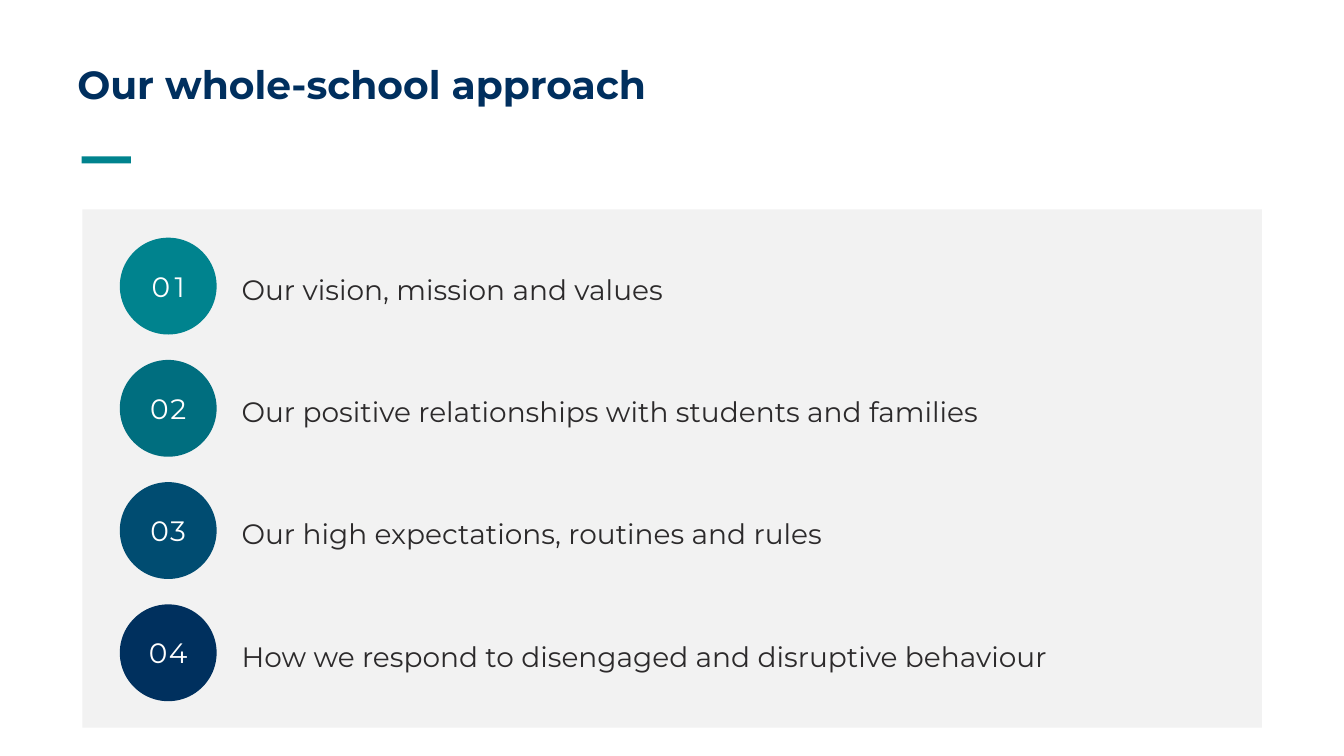
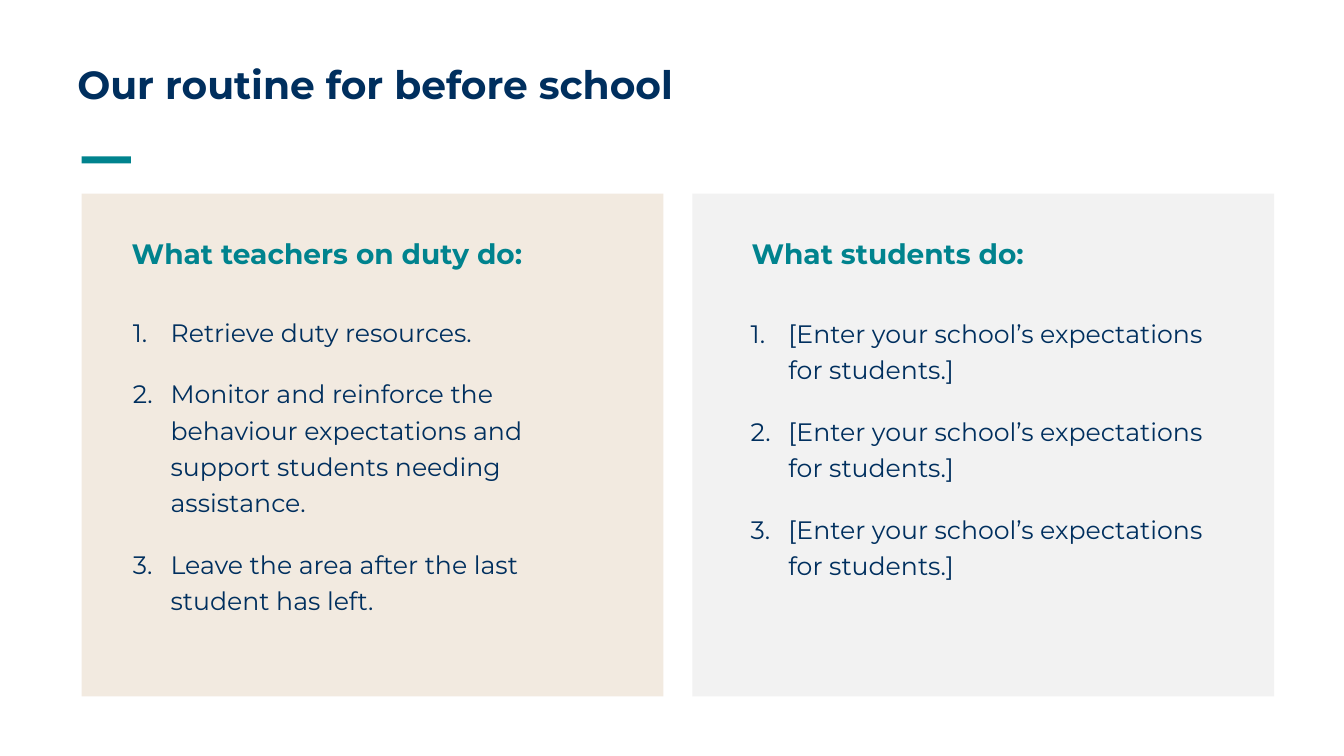
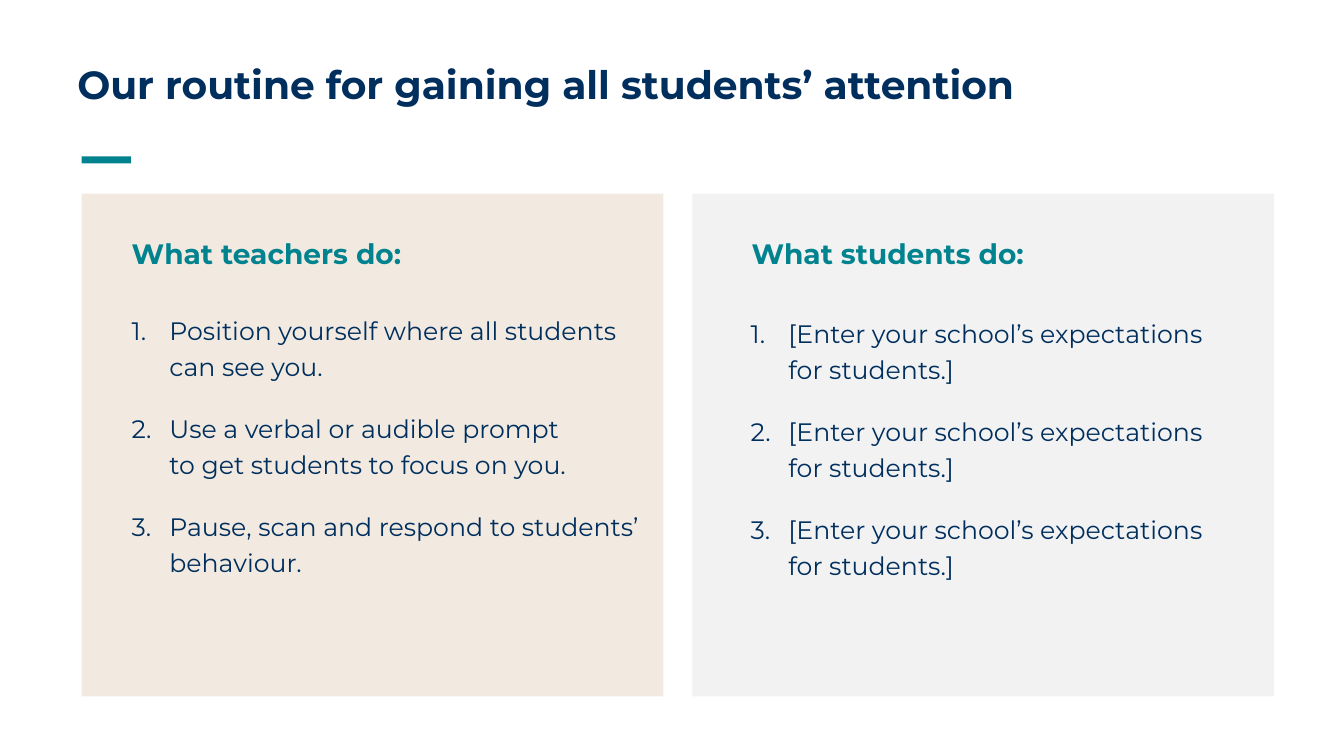
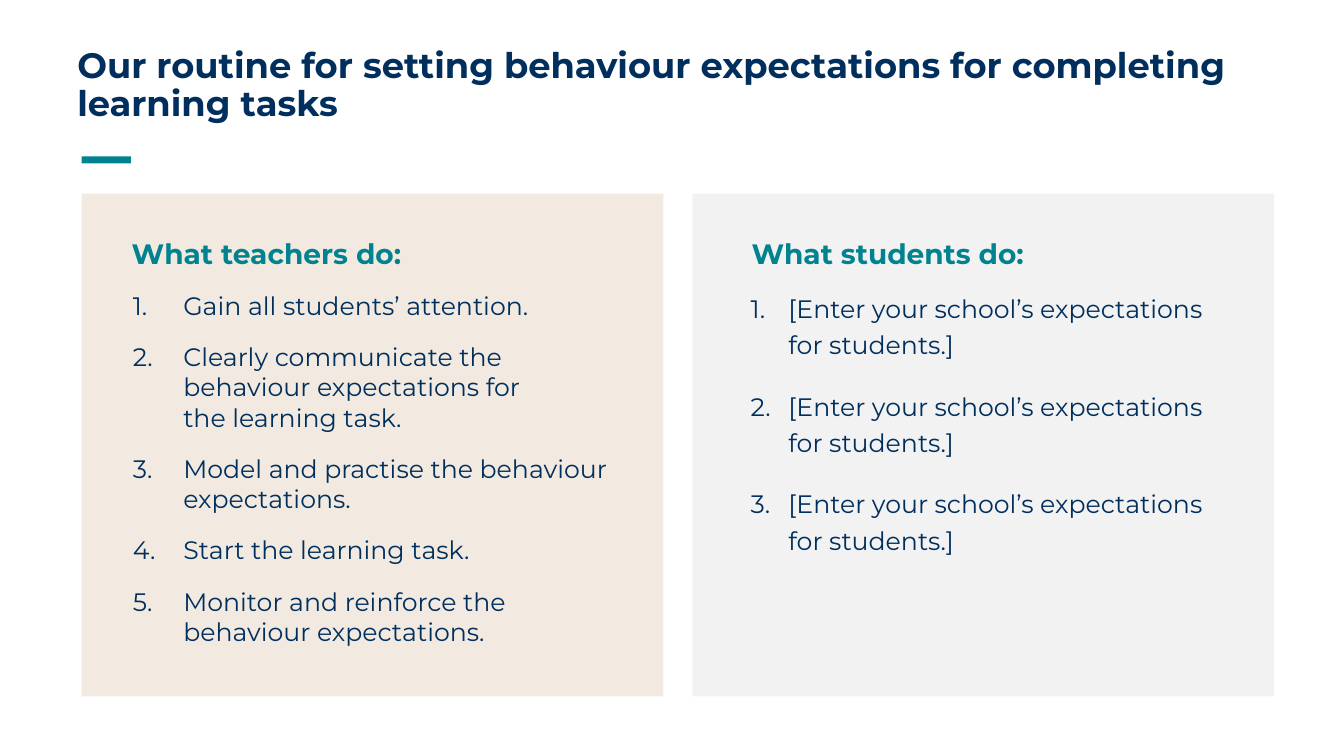
from dataclasses import dataclass

from lxml import etree
from pptx import Presentation
from pptx.dml.color import RGBColor
from pptx.enum.shapes import MSO_SHAPE
from pptx.enum.text import MSO_ANCHOR, MSO_AUTO_SIZE, PP_ALIGN
from pptx.oxml.ns import qn
from pptx.util import Cm, Pt

# Shared style
FONT = "Montserrat"
NAVY = RGBColor(0x00, 0x2F, 0x5E)
TEAL = RGBColor(0x00, 0x83, 0x8E)
INK = RGBColor(0x2C, 0x2A, 0x2B)
WHITE = RGBColor(0xFF, 0xFF, 0xFF)
SAND = RGBColor(0xF2, 0xEA, 0xE0)
GREY = RGBColor(0xF2, 0xF2, 0xF2)
STEP_COLOURS = [TEAL, RGBColor(0x00, 0x6E, 0x7F),
                RGBColor(0x00, 0x4C, 0x71), RGBColor(0x00, 0x30, 0x5E)]

RECTANGLE = MSO_SHAPE.RECTANGLE
OVAL = MSO_SHAPE.OVAL
TOP = MSO_ANCHOR.TOP
MIDDLE = MSO_ANCHOR.MIDDLE
CENTER = PP_ALIGN.CENTER
GROW = MSO_AUTO_SIZE.SHAPE_TO_FIT_TEXT

# Panel grid, in centimetres
MARGIN = 2.06
PANEL_TOP, PANEL_WIDTH, PANEL_HEIGHT = 4.88, 14.66, 12.67
RIGHT_PANEL = 17.45


@dataclass
class ListStyle:
    indent: float = 0.95
    line_spacing: float = 1.2
    space_after: float = 18


class SchoolDeck:
    def __init__(self):
        self.deck = Presentation()
        self.deck.slide_width = Cm(33.87)
        self.deck.slide_height = Cm(19.05)
        self.slide = None

    def start_slide(self, title, size=28):
        self.slide = self.deck.slides.add_slide(self.deck.slide_layouts[6])
        self.shape(RECTANGLE, MARGIN, 3.94, 1.24, 0.18, TEAL)
        box = self.text(title, 1.7, 1.12, 30.33, 2.11, size, NAVY,
                        bold=True, anchor=MIDDLE, grow=False)
        box.text_frame.paragraphs[0].line_spacing = 0.9

    def shape(self, kind, left, top, width, height, fill):
        shape = self.slide.shapes.add_shape(
            kind, Cm(left), Cm(top), Cm(width), Cm(height))
        shape.shadow.inherit = False
        shape.fill.solid()
        shape.fill.fore_color.rgb = fill
        shape.line.fill.background()
        return shape

    def format(self, para, size, colour, bold=False):
        for span in para.runs:
            span.font.name = FONT
            span.font.size = Pt(size)
            span.font.bold = bold
            span.font.color.rgb = colour

    def text(self, words, left, top, width, height, size, colour,
             bold=False, anchor=TOP, grow=True):
        box = self.slide.shapes.add_textbox(
            Cm(left), Cm(top), Cm(width), Cm(height))
        frame = box.text_frame
        frame.word_wrap = True
        frame.vertical_anchor = anchor
        if grow:
            frame.auto_size = GROW
        frame.text = words
        self.format(frame.paragraphs[0], size, colour, bold)
        return box

    def numbered_circle(self, number, left, top, size, fill, spacing):
        circle = self.shape(OVAL, left, top, size, size, fill)
        frame = circle.text_frame
        frame.margin_left = frame.margin_right = 0
        frame.vertical_anchor = MIDDLE
        frame.text = f"{number:02d}"
        para = frame.paragraphs[0]
        para.alignment = CENTER
        self.format(para, 20, WHITE)
        for span in para.runs:
            span.font._element.set("spc", str(spacing))

    def numbered_list(self, items, left, top, width, height, style):
        box = self.text("", left, top, width, height, 18, NAVY)
        frame = box.text_frame
        for index, item in enumerate(items):
            para = frame.add_paragraph() if index else frame.paragraphs[0]
            para.text = item
            properties = para._p.get_or_add_pPr()
            properties.set("marL", str(Cm(style.indent)))
            properties.set("indent", str(-Cm(style.indent)))
            etree.SubElement(properties, qn("a:buFont"), typeface="+mj-lt")
            etree.SubElement(properties, qn("a:buAutoNum"), type="arabicPeriod")
            para.line_spacing = style.line_spacing
            para.space_after = Pt(style.space_after)
            self.format(para, 18, NAVY)

    def panel(self, left, fill, heading, heading_left, heading_width):
        self.shape(RECTANGLE, left, PANEL_TOP, PANEL_WIDTH, PANEL_HEIGHT, fill)
        self.text(heading, heading_left, 5.84, heading_width, 1.12,
                  20, TEAL, bold=True)

    def routine(self, title, heading, steps, steps_box, title_size=28,
                style=ListStyle(), students_top=7.75):
        self.start_slide(title, title_size)
        self.panel(MARGIN, SAND, heading, 3.07, 13.36)
        self.numbered_list(steps, *steps_box, style)
        self.panel(RIGHT_PANEL, GREY, "What students do:", 18.69, 9.5)
        expectations = ["[Enter your school’s expectations for students.]"] * 3
        self.numbered_list(expectations, 18.67, students_top, 12.67, 7.01,
                           ListStyle())

    def approach(self, title, topics):
        self.start_slide(title)
        self.shape(RECTANGLE, 2.08, 5.28, 29.72, 13.06, GREY)
        for index, (topic, width) in enumerate(topics):
            top = 5.99 + 3.08 * index
            self.numbered_circle(index + 1, 3.02, top, 2.44,
                                 STEP_COLOURS[index], 110 if index else 300)
            box = self.text(topic, 5.84, top + 0.39, width, 1.4, 20, INK,
                            anchor=MIDDLE)
            para = box.text_frame.paragraphs[0]
            para.line_spacing = 1.5
            para.space_after = Pt(30)


def main():
    school = SchoolDeck()

    # Overview: topics with the widths of their boxes
    school.approach("Our whole-school approach", [
        ("Our vision, mission and values", 17.65),
        ("Our positive relationships with students and families", 24.28),
        ("Our high expectations, routines and rules", 22.3),
        ("How we respond to disengaged and disruptive behaviour", 22.81),
    ])

    # Routines
    school.routine(
        "Our routine for before school", "What teachers on duty do:",
        ["Retrieve duty resources.",
         "Monitor and reinforce the\nbehaviour expectations and support "
         "students needing assistance.",
         "Leave the area after the last student has left."],
        (3.1, 7.72, 12.7, 7.92))
    school.routine(
        "Our routine for gaining all students’ attention", "What teachers do:",
        ["Position yourself where all students can see you.",
         "Use a verbal or audible prompt\nto get students to focus on you.",
         "Pause, scan and respond to students’ behaviour."],
        (3.07, 7.67, 13.36, 7.01))
    school.routine(
        "Our routine for setting behaviour expectations for completing "
        "learning tasks", "What teachers do:",
        ["Gain all students’ attention.",
         "Clearly communicate the behaviour expectations for\n"
         "the learning task.",
         "Model and practise the behaviour expectations.",
         "Start the learning task.",
         "Monitor and reinforce the behaviour expectations."],
        (3.1, 7.19, 13.13, 9.32), title_size=25.2,
        style=ListStyle(1.27, 1.0, 15), students_top=7.11)

    school.deck.save("out.pptx")


if __name__ == "__main__":
    main()
